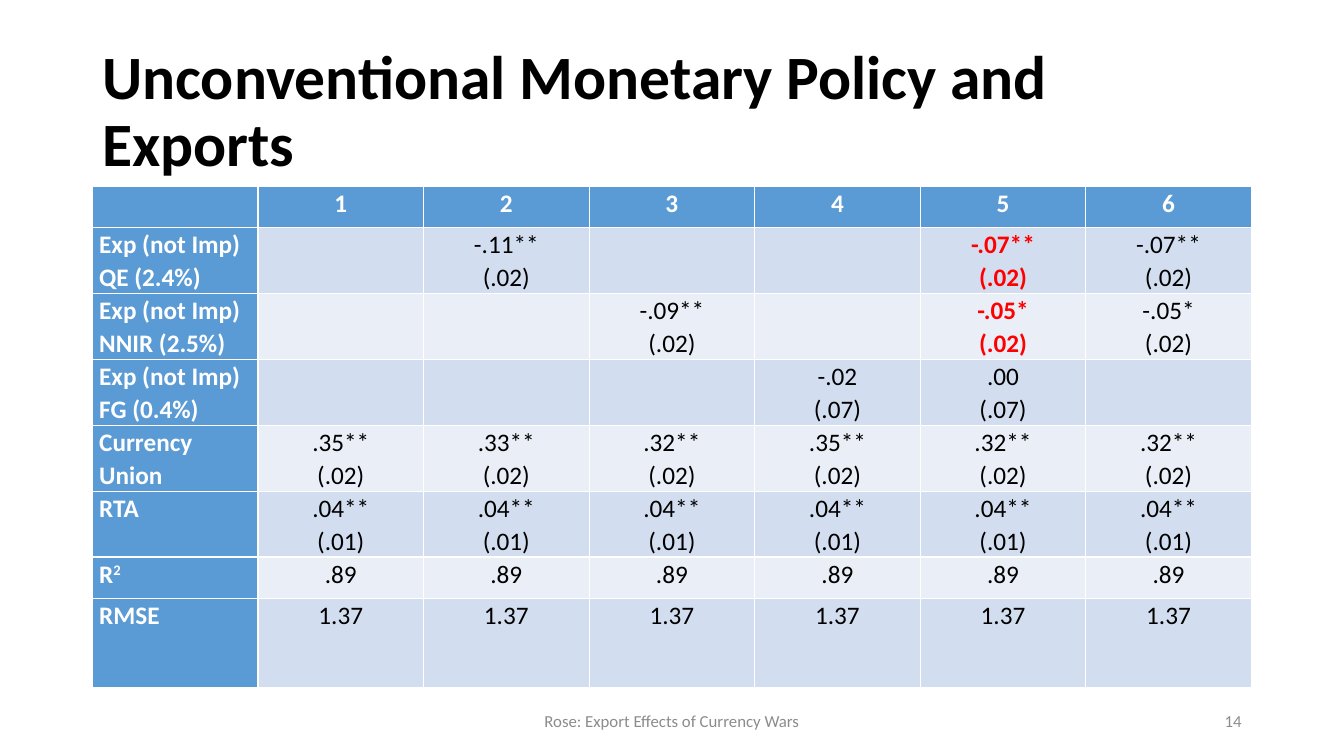
"""Build the slide on unconventional monetary policy and exports."""
from dataclasses import dataclass

import pptx
import pptx.dml.color
import pptx.enum.text
import pptx.util

Cm = pptx.util.Cm
Pt = pptx.util.Pt
RGBColor = pptx.dml.color.RGBColor
ALIGN = pptx.enum.text.PP_ALIGN

BLACK = RGBColor(0x00, 0x00, 0x00)
WHITE = RGBColor(0xFF, 0xFF, 0xFF)
RED = RGBColor(0xFF, 0x00, 0x00)
GRAY = RGBColor(0x8C, 0x8C, 0x8C)
BLUE = RGBColor(0x5B, 0x9B, 0xD5)
BANDS = (RGBColor(0xD2, 0xDE, 0xEF), RGBColor(0xEA, 0xEF, 0xF7))
FONT = "Calibri"


@dataclass
class Label:
    text: str
    left: float
    top: float
    width: float
    height: float
    size: int
    color: RGBColor
    align: int
    bold: bool = False
    spacing: float = 1.0


@dataclass
class Row:
    name: str
    values: tuple[str, ...]
    height: float = 1.04
    superscript: str = ""


LABELS = [
    Label("Unconventional Monetary Policy and Exports",
          2.33, 1.01, 29.21, 3.68, 44, BLACK, ALIGN.LEFT, True, 0.9),
    Label("14", 23.92, 17.65, 7.62, 1.01, 12, GRAY, ALIGN.RIGHT),
    Label("Rose: Export Effects of Currency Wars",
          11.22, 17.65, 11.43, 1.01, 12, GRAY, ALIGN.CENTER),
]

ROWS = [
    Row("", ("1", "2", "3", "4", "5", "6")),
    Row("Exp (not Imp) QE (2.4%)",
        ("", "-.11**\n(.02)", "", "", "-.07**\n(.02)", "-.07**\n(.02)")),
    Row("Exp (not Imp) NNIR (2.5%)",
        ("", "", "-.09**\n(.02)", "", "-.05*\n(.02)", "-.05*\n(.02)")),
    Row("Exp (not Imp) FG (0.4%)", ("", "", "", "-.02\n(.07)", ".00\n(.07)", "")),
    Row("Currency\nUnion", tuple(f"{v}**\n(.02)" for v in
                                 (".35", ".33", ".32", ".35", ".32", ".32"))),
    Row("RTA", (".04**\n(.01)",) * 6),
    Row("R", (".89",) * 6, superscript="2"),
    Row("RMSE", ("1.37",) * 6, 2.26),
]
RED_CELLS = {(1, 5), (2, 5)}


def format_text(tf: pptx.text.text.TextFrame, size: int, color: RGBColor,
                bold: bool, align: int, spacing: float) -> None:
    for p in tf.paragraphs:
        p.alignment = align
        p.line_spacing = spacing
        for r in p.runs:
            r.font.name = FONT
            r.font.size = Pt(size)
            r.font.bold = bold
            r.font.color.rgb = color


def add_label(s: pptx.slide.Slide, label: Label) -> None:
    sp = s.shapes.add_textbox(Cm(label.left), Cm(label.top),
                              Cm(label.width), Cm(label.height))
    tf = sp.text_frame
    tf.word_wrap = True
    tf.vertical_anchor = pptx.enum.text.MSO_ANCHOR.MIDDLE
    tf.text = label.text
    format_text(tf, label.size, label.color, label.bold, label.align, label.spacing)


def fill_cell(cell: pptx.table._Cell, text: str, superscript: str,
              i: int, j: int) -> None:
    heading = i == 0 or j == 0
    red = (i, j) in RED_CELLS
    cell.fill.solid()
    cell.fill.fore_color.rgb = BLUE if heading else BANDS[(i - 1) % 2]
    if not text:
        return
    cell.margin_left = cell.margin_right = Cm(0.17)
    cell.margin_top = cell.margin_bottom = Cm(0)
    tf = cell.text_frame
    tf.text = text
    if superscript:
        r = tf.paragraphs[0].add_run()
        r.text = superscript
        r.font._element.set("baseline", "30000")
    color = WHITE if heading else RED if red else BLACK
    align = ALIGN.LEFT if j == 0 else ALIGN.CENTER
    format_text(tf, 18, color, heading or red, align, 1.07)


def add_results(s: pptx.slide.Slide) -> None:
    columns = len(ROWS[0].values) + 1
    table = s.shapes.add_table(len(ROWS), columns, Cm(2.33), Cm(4.7),
                               Cm(29.21), Cm(12.29)).table
    table.first_col = True
    for column in table.columns:
        column.width = Cm(29.21 / columns)
    for i, row in enumerate(ROWS):
        table.rows[i].height = Cm(row.height)
        for j, text in enumerate((row.name, *row.values)):
            fill_cell(table.cell(i, j), text, row.superscript if j == 0 else "", i, j)


def main() -> None:
    prs = pptx.Presentation()
    prs.slide_width, prs.slide_height = Cm(33.87), Cm(19.05)
    s = prs.slides.add_slide(prs.slide_layouts[6])
    add_results(s)
    for label in LABELS:
        add_label(s, label)
    prs.save("out.pptx")


if __name__ == "__main__":
    main()
